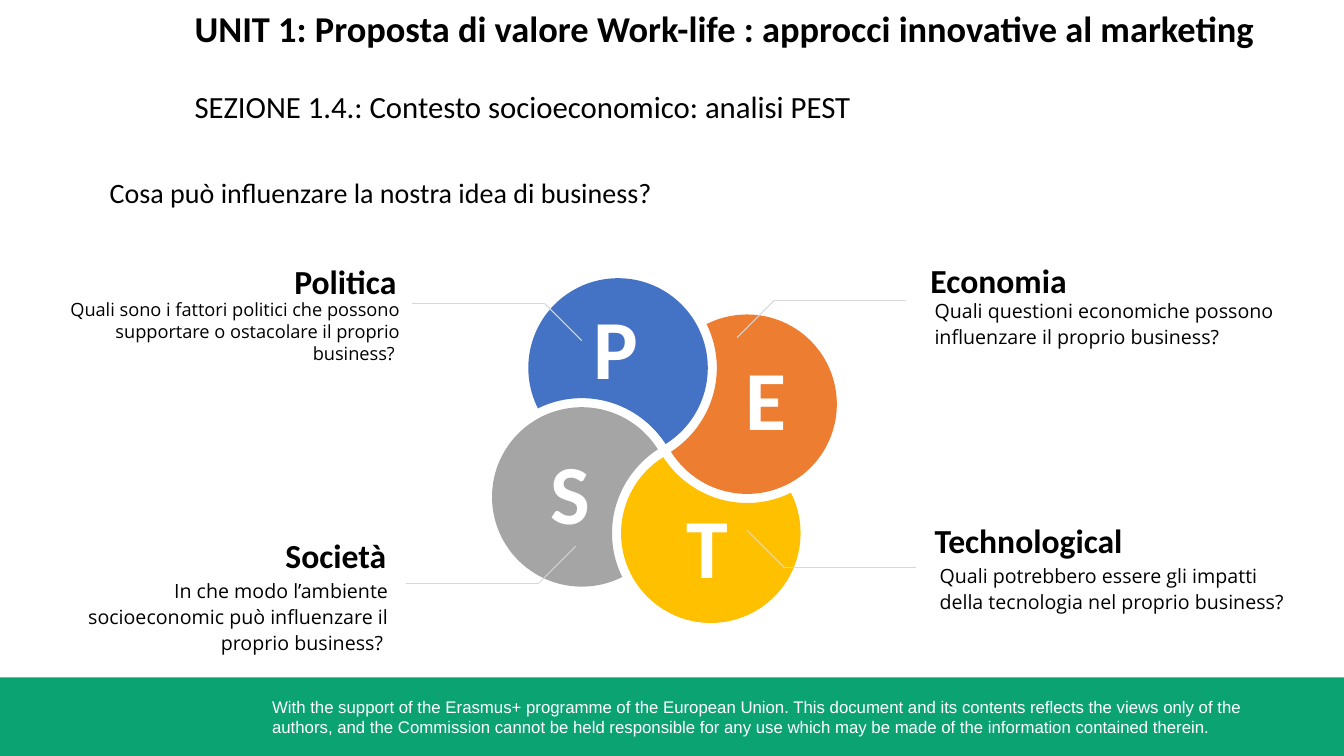
from dataclasses import dataclass
from math import cos, radians, sin, tan

from lxml.etree import SubElement
from pptx import Presentation
from pptx.dml.color import RGBColor
from pptx.enum.shapes import MSO_CONNECTOR, MSO_SHAPE
from pptx.enum.text import MSO_ANCHOR, MSO_AUTO_SIZE, PP_ALIGN
from pptx.oxml.ns import qn
from pptx.util import Inches, Pt

HUB = (6.59, 4.47)
PETAL_OFFSET = (-0.46, -0.82)
PETAL_RADIUS, GAP_RADIUS = 0.89, 0.98
LEADER_RISE, LEADER_RUN = 0.37, 1.31
INSETS = (0.1, 0.05, 0.1, 0.05)

LETTER = {"name": "Calibri", "size": Pt(60), "bold": True}
HEADING = {"name": "Calibri", "size": Pt(24), "bold": True}
TITLE = {"name": "Calibri", "size": Pt(26), "bold": True}
SECTION = {"name": "Calibri", "size": Pt(22)}
LEAD = {"name": "Calibri", "size": Pt(20)}
CREDIT = {"name": "Arial", "size": Pt(12)}


@dataclass
class Factor:
    letter: str
    color: str
    letter_corner: tuple[float, float]
    heading: str
    heading_box: tuple[float, float, float, float]
    question: str
    question_corner: tuple[float, float]
    leader_start: tuple[float, float]
    side: int  # -1 is left of the petals, 1 is right
    rise: int  # -1 is upwards, 1 is downwards
    question_size: float = 14
    question_spacing: float = 1.1


# Clockwise from the upper left petal
FACTORS = [
    Factor("P", "4472C4", (5.51, 2.88), "Politica", (2.72, 2.54, 1.31, 0.5),
           "Quali sono i fattori politici che possono supportare o ostacolare il proprio business? ",
           (0.34, 2.91), (5.77, 3.38), -1, -1, 13, 1.0),
    Factor("E", "ED7D31", (7.0, 3.39), "Economia", (9.13, 2.53, 2.12, 0.5),
           "Quali questioni economiche possono influenzare il proprio business?",
           (9.17, 2.89), (7.31, 3.35), 1, -1),
    Factor("T", "FFC000", (6.42, 4.86), "Technological", (9.17, 5.11, 2.08, 0.5),
           "Quali potrebbero essere gli impatti della tecnologia nel proprio business?",
           (9.22, 5.52), (7.41, 5.26), 1, 1),
    Factor("S", "A5A5A5", (5.06, 4.32), "Società", (2.57, 5.26, 1.36, 0.5),
           "In che modo l’ambiente socioeconomic può influenzare il proprio business? ",
           (0.23, 5.67), (5.71, 5.42), -1, 1),
]


def rgb(value: str) -> RGBColor:
    return RGBColor.from_string(value)


def fill_plain(shape, color: str) -> None:
    shape.shadow.inherit = False
    shape.fill.solid()
    shape.fill.fore_color.rgb = rgb(color)
    shape.line.fill.background()


def write(shape, text: str, font_format: dict, color: str = "000000",
          align: PP_ALIGN = PP_ALIGN.LEFT, spacing: float = 1.0,
          insets: tuple[float, float, float, float] = INSETS) -> None:
    frame = shape.text_frame
    frame.text = text
    left, top, right, bottom = map(Inches, insets)
    frame_format = {
        "word_wrap": True, "auto_size": MSO_AUTO_SIZE.NONE,
        "vertical_anchor": MSO_ANCHOR.TOP, "margin_left": left,
        "margin_top": top, "margin_right": right, "margin_bottom": bottom,
    }
    for key, value in frame_format.items():
        setattr(frame, key, value)
    paragraph = frame.paragraphs[0]
    paragraph.alignment = align
    paragraph.line_spacing = spacing
    for key, value in font_format.items():
        setattr(paragraph.font, key, value)
    paragraph.font.color.rgb = rgb(color)


def add_text(slide, box: tuple[float, float, float, float], text: str,
             font_format: dict, **options) -> None:
    write(slide.shapes.add_textbox(*map(Inches, box)), text, font_format, **options)


def petal_center(turn: int) -> tuple[float, float]:
    """Centre of the petal after a number of clockwise quarter turns."""
    dx, dy = PETAL_OFFSET
    for _ in range(turn % 4):
        dx, dy = -dy, dx
    return HUB[0] + dx, HUB[1] + dy


def arc(center: tuple[float, float], radius: float, start: int, end: int,
        pieces: int) -> list[tuple[int, int]]:
    """Start point of an arc, then two handles and an end point for each Bézier piece."""
    step = radians(end - start) / pieces
    handle = 4 / 3 * tan(step / 4)

    def point(angle: float, lean: float = 0) -> tuple[int, int]:
        return (Inches(center[0] + radius * (cos(angle) - lean * sin(angle))),
                Inches(center[1] + radius * (sin(angle) + lean * cos(angle))))

    points = [point(radians(start))]
    for i in range(pieces):
        a = radians(start) + i * step
        points += [point(a, handle), point(a + step, -handle), point(a + step)]
    return points


def add_petal(slide, turn: int, color: str) -> None:
    """A disc with a bite taken out around the preceding petal."""
    turned = 90 * turn
    rim = arc(petal_center(turn), PETAL_RADIUS, 153 + turned, 418 + turned, 4)
    bite = arc(petal_center(turn - 1), GAP_RADIUS, -32 + turned, -116 + turned, 2)
    outline = rim + bite[1:]
    builder = slide.shapes.build_freeform(*outline[0])
    builder.add_line_segments(outline[1:], close=True)
    petal = builder.convert_to_shape()
    segments = list(petal._element.iter(qn("a:lnTo")))
    for i in range(0, len(segments), 3):
        curve = segments[i].makeelement(qn("a:cubicBezTo"))
        segments[i].addprevious(curve)
        for segment in segments[i:i + 3]:
            curve.append(segment[0])
            segment.getparent().remove(segment)
    fill_plain(petal, color)


def add_leader(slide, factor: Factor) -> None:
    x, y = factor.leader_start
    elbow = (x + factor.side * LEADER_RISE, y + factor.rise * LEADER_RISE)
    tail = (elbow[0] + factor.side * LEADER_RUN, elbow[1])
    leader = slide.shapes.add_group_shape()
    for start, end in (((x, y), elbow), (elbow, tail)):
        line = leader.shapes.add_connector(MSO_CONNECTOR.STRAIGHT, *map(Inches, start + end))
        line.line.color.rgb = rgb("D8D8D8")
        line.line.width = Pt(0.75)
        SubElement(line._element.spPr, qn("a:effectLst"))


def add_labels(slide, factor: Factor) -> None:
    align = PP_ALIGN.RIGHT if factor.side < 0 else PP_ALIGN.LEFT
    question_format = {"name": "Open Sans", "size": Pt(factor.question_size)}
    add_text(slide, (*factor.question_corner, 3.72, 0.8), factor.question,
             question_format, align=align, spacing=factor.question_spacing)
    add_text(slide, factor.heading_box, factor.heading, HEADING, align=align)


def main() -> None:
    deck = Presentation()
    deck.slide_width, deck.slide_height = Inches(13.33), Inches(7.5)
    slide = deck.slides.add_slide(deck.slide_layouts[5])

    title = slide.shapes.title
    title.left, title.top, title.width, title.height = map(Inches, (1.93, 0.05, 11.4, 0.45))
    write(title, "UNIT 1: Proposta di valore Work-life : approcci innovative al marketing",
          TITLE, insets=(0, 0.01, 0, 0))

    footer = slide.shapes.add_shape(MSO_SHAPE.RECTANGLE, *map(Inches, (0, 6.72, 13.33, 0.78)))
    fill_plain(footer, "0CA373")
    add_text(slide, (2.6, 6.86, 10.42, 0.5),
             "With the support of the Erasmus+ programme of the European Union. This document "
             "and its contents reflects the views only of the authors, and the Commission cannot "
             "be held responsible for any use which may be made of the information contained "
             "therein.", CREDIT, color="FFFFFF")

    add_text(slide, (1.93, 0.85, 10.44, 0.39),
             "SEZIONE 1.4.: Contesto socioeconomico: analisi PEST", SECTION,
             insets=(0, 0.02, 0, 0))
    add_text(slide, (0.99, 1.69, 7.74, 0.44),
             "Cosa può influenzare la nostra idea di business?", LEAD)

    for turn, factor in enumerate(FACTORS):
        add_petal(slide, turn, factor.color)
    for factor in FACTORS:
        add_text(slide, (*factor.letter_corner, 1.2, 1.11), factor.letter, LETTER,
                 color="FFFFFF", align=PP_ALIGN.CENTER)
        add_leader(slide, factor)
        add_labels(slide, factor)

    deck.save("out.pptx")


if __name__ == "__main__":
    main()
